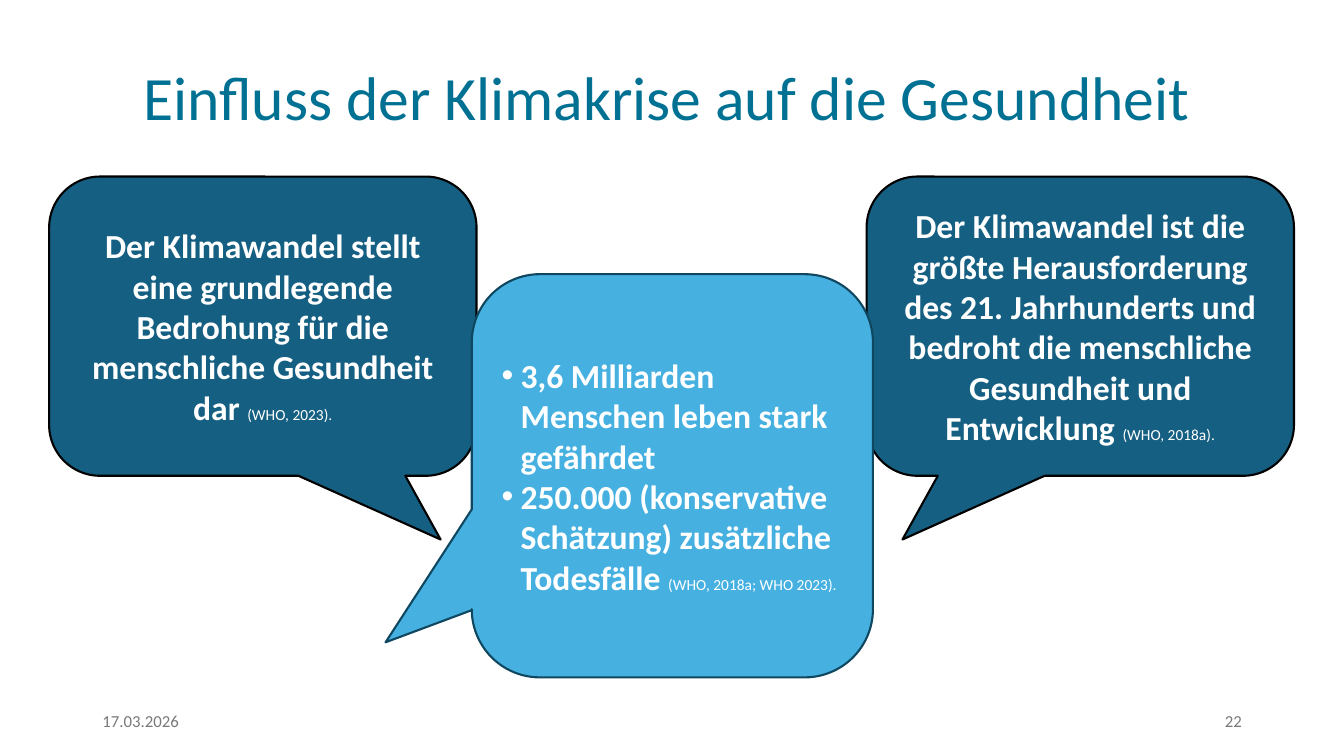
"""Build the slide on how the climate crisis affects health."""
from lxml.etree import SubElement
from pptx import Presentation
from pptx.dml.color import RGBColor
from pptx.enum.shapes import MSO_SHAPE as Preset
from pptx.enum.text import MSO_ANCHOR as Anchor, MSO_AUTO_SIZE as AutoSize, PP_ALIGN as Align
from pptx.oxml.ns import qn
from pptx.util import Cm, Pt

FONT = "Calibri"
WHITE = RGBColor(0xFF, 0xFF, 0xFF)
BLACK = RGBColor(0x00, 0x00, 0x00)
TITLE_BLUE = RGBColor(0x01, 0x71, 0x93)
DARK_BLUE = RGBColor(0x15, 0x60, 0x82)
LIGHT_BLUE = RGBColor(0x46, 0xB1, 0xE1)
EDGE_BLUE = RGBColor(0x10, 0x47, 0x60)
GREY = RGBColor(0x79, 0x79, 0x79)

TITLE = "Einfluss der Klimakrise auf die Gesundheit"
TITLE_BOX = (3.35, 1.17, 27.15, 2.72)
FOOTERS = [("17.03.2026", 2.33, Align.LEFT), ("22", 23.93, Align.RIGHT)]
CORNER = 0.17
INDENT = Cm(0.48)

CALLOUTS = [
    {"box": (1.24, 4.45, 10.77, 7.54), "tail": (0.416, 0.713),
     "fill": DARK_BLUE, "line": BLACK, "bullets": False,
     "text": [("Der Klimawandel stellt eine grundlegende Bedrohung für die "
               "menschliche Gesundheit dar ", "(WHO, 2023).")]},
    {"box": (21.84, 4.45, 10.77, 7.54), "tail": (-0.416, 0.713),
     "fill": DARK_BLUE, "line": BLACK, "bullets": False,
     "text": [("Der Klimawandel ist die größte Herausforderung des 21. Jahrhunderts und "
               "bedroht die menschliche Gesundheit und Entwicklung ", "(WHO, 2018a).")]},
    {"box": (11.89, 6.91, 10.11, 10.16), "tail": (-0.715, 0.413),
     "fill": LIGHT_BLUE, "line": EDGE_BLUE, "bullets": True,
     "text": [("3,6 Milliarden Menschen leben stark gefährdet", ""),
              ("250.000 (konservative Schätzung) zusätzliche Todesfälle ",
               "(WHO, 2018a; WHO 2023).")]},
]


def format_run(run, size, color, bold=False):
    """Set the font of one run."""
    run.font.name = FONT
    run.font.size = Pt(size)
    run.font.bold = bold
    run.font.color.rgb = color


def add_bullet(paragraph):
    """Give a paragraph a hanging round bullet."""
    properties = paragraph._p.get_or_add_pPr()
    properties.set("marL", str(INDENT))
    properties.set("indent", str(-INDENT))
    SubElement(properties, qn("a:buFont")).set("typeface", "Arial")
    SubElement(properties, qn("a:buChar")).set("char", "•")


def add_title(slide):
    """Place and format the title placeholder."""
    title = slide.shapes.title
    title.left, title.top, title.width, title.height = map(Cm, TITLE_BOX)
    frame = title.text_frame
    frame.text = TITLE
    frame.auto_size = AutoSize.NONE
    frame.vertical_anchor = Anchor.MIDDLE
    paragraph = frame.paragraphs[0]
    paragraph.alignment = Align.LEFT
    paragraph.line_spacing = 0.9
    format_run(paragraph.runs[0], 44, TITLE_BLUE)


def add_footer(slide, text, left, alignment):
    """Add one footer text box."""
    frame = slide.shapes.add_textbox(Cm(left), Cm(17.65), Cm(7.62), Cm(1.02)).text_frame
    frame.text = text
    frame.word_wrap = True
    frame.vertical_anchor = Anchor.MIDDLE
    paragraph = frame.paragraphs[0]
    paragraph.alignment = alignment
    format_run(paragraph.runs[0], 12, GREY)


def add_callout(slide, callout):
    """Add one speech bubble with its statements and citations."""
    shape = slide.shapes.add_shape(Preset.ROUNDED_RECTANGULAR_CALLOUT, *map(Cm, callout["box"]))
    for index, value in enumerate((*callout["tail"], CORNER)):
        shape.adjustments[index] = value
    shape.shadow.inherit = False
    shape.fill.solid()
    shape.fill.fore_color.rgb = callout["fill"]
    shape.line.color.rgb = callout["line"]
    shape.line.width = Pt(1.5)
    frame = shape.text_frame
    frame.word_wrap = True
    frame.vertical_anchor = Anchor.MIDDLE
    for index, (statement, citation) in enumerate(callout["text"]):
        paragraph = frame.add_paragraph() if index else frame.paragraphs[0]
        paragraph.text = statement
        format_run(paragraph.runs[0], 24, WHITE, bold=True)
        if callout["bullets"]:
            paragraph.alignment = Align.LEFT
            add_bullet(paragraph)
        else:
            paragraph.alignment = Align.CENTER
        if citation:
            run = paragraph.add_run()
            run.text = citation
            format_run(run, 11, WHITE)


def main():
    """Build and save the presentation."""
    presentation = Presentation()
    presentation.slide_width, presentation.slide_height = Cm(33.87), Cm(19.05)
    slide = presentation.slides.add_slide(presentation.slide_layouts[5])
    add_title(slide)
    for footer in FOOTERS:
        add_footer(slide, *footer)
    for callout in CALLOUTS:
        add_callout(slide, callout)
    presentation.save("out.pptx")


if __name__ == "__main__":
    main()
